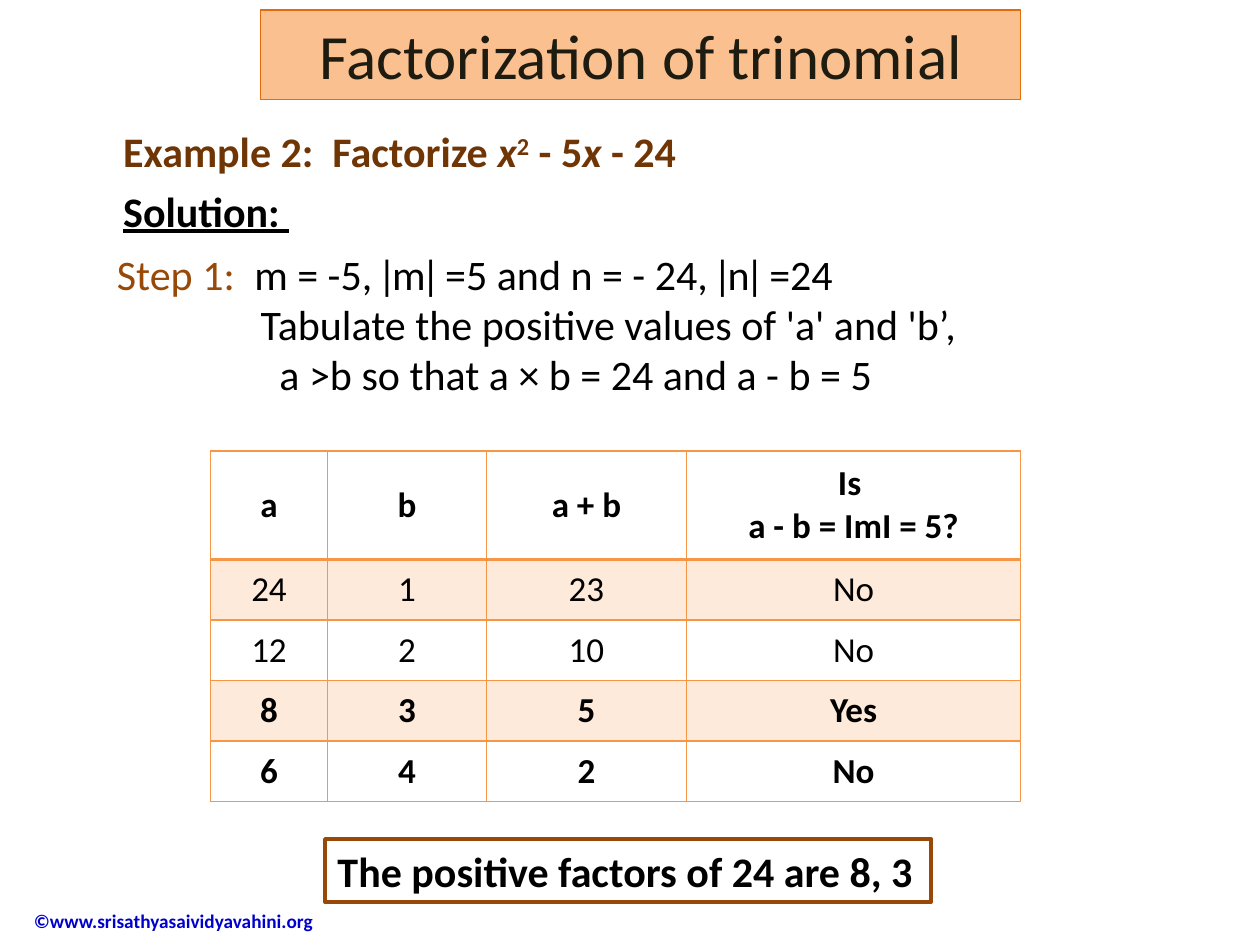
from lxml import etree
from pptx import Presentation
from pptx.dml.color import RGBColor
from pptx.enum.shapes import MSO_SHAPE
from pptx.enum.text import MSO_ANCHOR, MSO_AUTO_SIZE, PP_ALIGN
from pptx.oxml.ns import qn
from pptx.util import Inches, Pt

RECTANGLE = MSO_SHAPE.RECTANGLE
TOP, MIDDLE = MSO_ANCHOR.TOP, MSO_ANCHOR.MIDDLE
LEFT, CENTER = PP_ALIGN.LEFT, PP_ALIGN.CENTER
GROW = MSO_AUTO_SIZE.SHAPE_TO_FIT_TEXT

BLACK = "000000"
BROWN = "984807"
ORANGE = "F79646"


def color(hex_value):
    return RGBColor.from_string(hex_value)


def format_font(font, size, hex_value, bold=False):
    font.name = "Calibri"
    font.size = Pt(size)
    font.bold = bold
    font.color.rgb = color(hex_value)


def add_run(paragraph, text, size, hex_value, bold=False):
    run = paragraph.add_run()
    run.text = text
    format_font(run.font, size, hex_value, bold)
    return run


def indent(paragraph, length):
    properties = paragraph._p.get_or_add_pPr()
    properties.set("marL", str(Inches(length)))
    properties.set("indent", "0")


def add_tab_stop(paragraph, length):
    stops = etree.SubElement(paragraph._p.get_or_add_pPr(), qn("a:tabLst"))
    etree.SubElement(stops, qn("a:tab"), pos=str(Inches(length)), algn="l")


def add_text_box(slide, box, wrap=False):
    frame = slide.shapes.add_textbox(*map(Inches, box)).text_frame
    frame.word_wrap = wrap
    frame.auto_size = GROW
    return frame


def add_banner(slide, box, text, size, text_color, line, line_width,
               fill=None, bold=False, align=LEFT, wrap=False):
    banner = slide.shapes.add_shape(RECTANGLE, *map(Inches, box))
    banner.shadow.inherit = False
    if fill:
        banner.fill.solid()
        banner.fill.fore_color.rgb = color(fill)
    else:
        banner.fill.background()
    banner.line.color.rgb = color(line)
    banner.line.width = Pt(line_width)
    frame = banner.text_frame
    frame.word_wrap = wrap
    frame.auto_size = GROW
    frame.vertical_anchor = TOP
    paragraph = frame.paragraphs[0]
    paragraph.alignment = align
    add_run(paragraph, text, size, text_color, bold)


def set_border(cell, side, width):
    line = etree.SubElement(cell._tc.get_or_add_tcPr(), qn(f"a:ln{side}"), w=str(Pt(width)))
    fill = etree.SubElement(line, qn("a:solidFill"))
    etree.SubElement(fill, qn("a:srgbClr"), val=ORANGE)


def tint_cell(cell, percent):
    cell.fill.solid()
    cell.fill.fore_color.rgb = color(ORANGE)
    tint = cell._tc.tcPr.find(f"{qn('a:solidFill')}/{qn('a:srgbClr')}")
    etree.SubElement(tint, qn("a:alpha"), val=str(percent * 1000))


def add_factor_table(slide, left, top, widths, heights, rows, bold_rows):
    box = map(Inches, (left, top, sum(widths), sum(heights)))
    table = slide.shapes.add_table(len(rows), len(widths), *box).table
    table.first_row = table.horz_banding = False
    for column, width in zip(table.columns, widths):
        column.width = Inches(width)
    for row, height in zip(table.rows, heights):
        row.height = Inches(height)
    for r, values in enumerate(rows):
        for c, value in enumerate(values):
            cell = table.cell(r, c)
            cell.text_frame.text = value
            cell.vertical_anchor = MIDDLE
            for paragraph in cell.text_frame.paragraphs:
                paragraph.alignment = CENTER
                for run in paragraph.runs:
                    format_font(run.font, 20, BLACK, r in bold_rows)
            for side in "LRTB":
                header_rule = (r == 0 and side == "B") or (r == 1 and side == "T")
                set_border(cell, side, 2 if header_rule else 1)
            if r % 2:
                tint_cell(cell, 20)
            else:
                cell.fill.background()


def add_example(slide):
    example = add_text_box(slide, (0.88, 0.95, 4.64, 0.5)).paragraphs[0]
    pieces = ["Example 2:  Factorize ", "x", "2", " - 5", "x ", "- 24"]
    for piece in pieces:
        run = add_run(example, piece, 24, "6F3505", True)
        run.font.italic = piece.strip() == "x"
        if piece == "2":
            run.font._element.set("baseline", "30000")
    solution = add_text_box(slide, (0.88, 1.42, 1.53, 0.5)).paragraphs[0]
    add_run(solution, "Solution: ", 24, BLACK, True).font.underline = True


def add_step(slide):
    frame = add_text_box(slide, (0.83, 1.92, 8.5, 1.33), wrap=True)
    values = frame.paragraphs[0]
    add_tab_stop(values, 1.09)
    add_run(values, "Step 1:\t", 24, BROWN)
    add_run(values, "m = -5, ǀmǀ =5 and n = - 24, ǀnǀ =24", 24, BLACK)
    instructions = [
        (1.14, "Tabulate the positive values of 'a' and 'b’,"),
        (1.29, "a >b so that a × b = 24 and a - b = 5"),
    ]
    for length, text in instructions:
        instruction = frame.add_paragraph()
        indent(instruction, length)
        add_run(instruction, text, 24, BLACK)


def add_copyright(slide):
    frame = add_text_box(slide, (-0.33, 7.1, 3.02, 0.41), wrap=True)
    frame.auto_size = MSO_AUTO_SIZE.NONE
    frame.vertical_anchor = MIDDLE
    indent(frame.paragraphs[0], 0.5)
    add_run(frame.paragraphs[0], "©www.srisathyasaividyavahini.org", 11, "0000CC", True)


def main():
    presentation = Presentation()
    presentation.slide_width = Inches(10)
    presentation.slide_height = Inches(7.5)
    slide = presentation.slides.add_slide(presentation.slide_layouts[6])
    add_copyright(slide)
    add_example(slide)
    add_step(slide)
    factor_rows = [
        ["a", "b", "a + b", "Is \na - b = ImI = 5?"],
        ["24", "1", "23", "No"],
        ["12", "2", "10", "No"],
        ["8", "3", "5", "Yes"],
        ["6", "4", "2", "No"],
    ]
    add_factor_table(slide, 1.67, 3.58, [0.93, 1.26, 1.59, 2.65],
                     [0.86] + [0.48] * 4, factor_rows, {0, 3, 4})
    add_banner(slide, (2.58, 6.66, 4.81, 0.5), "The positive factors of 24 are 8, 3",
               24, BLACK, BROWN, 2.25, bold=True)
    add_banner(slide, (2.07, 0.08, 6.03, 0.71), "Factorization of trinomial",
               36, "1E1C11", "E46C0A", 0.75, fill="FAC090", align=CENTER, wrap=True)
    presentation.save("out.pptx")


if __name__ == "__main__":
    main()
